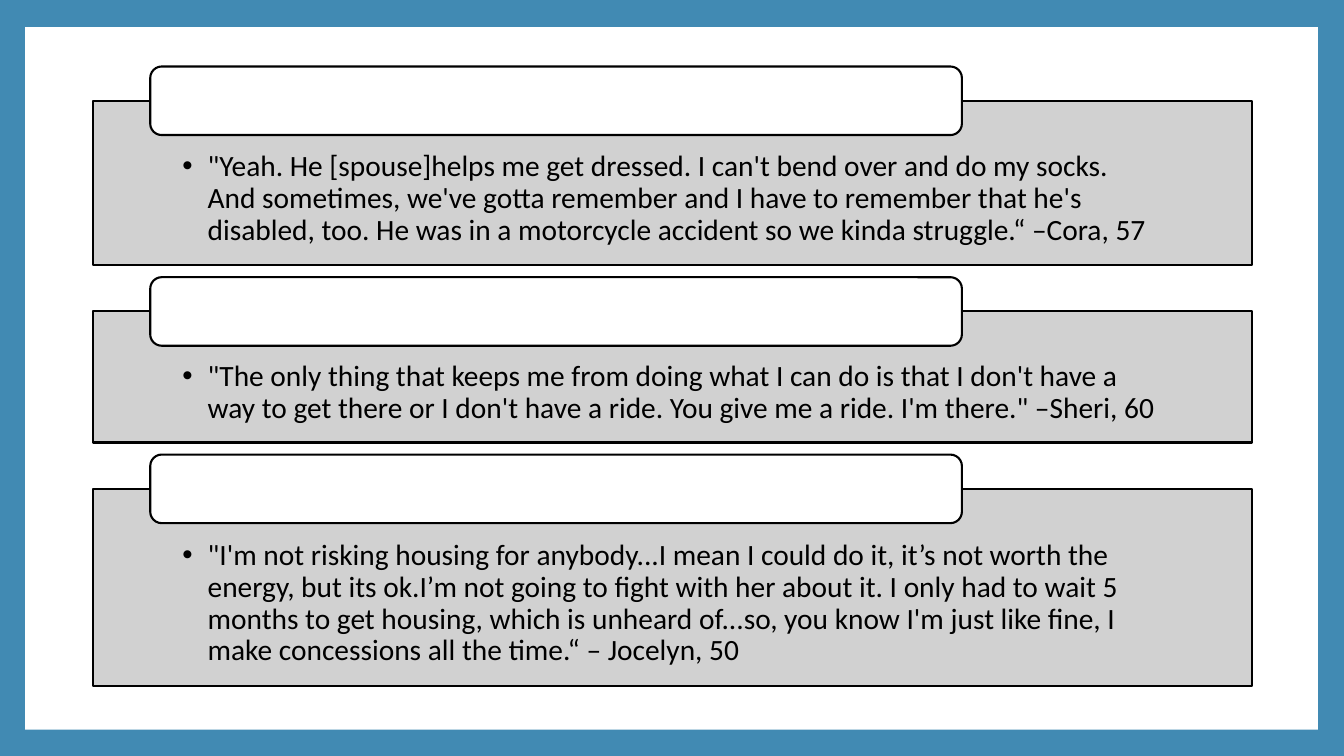
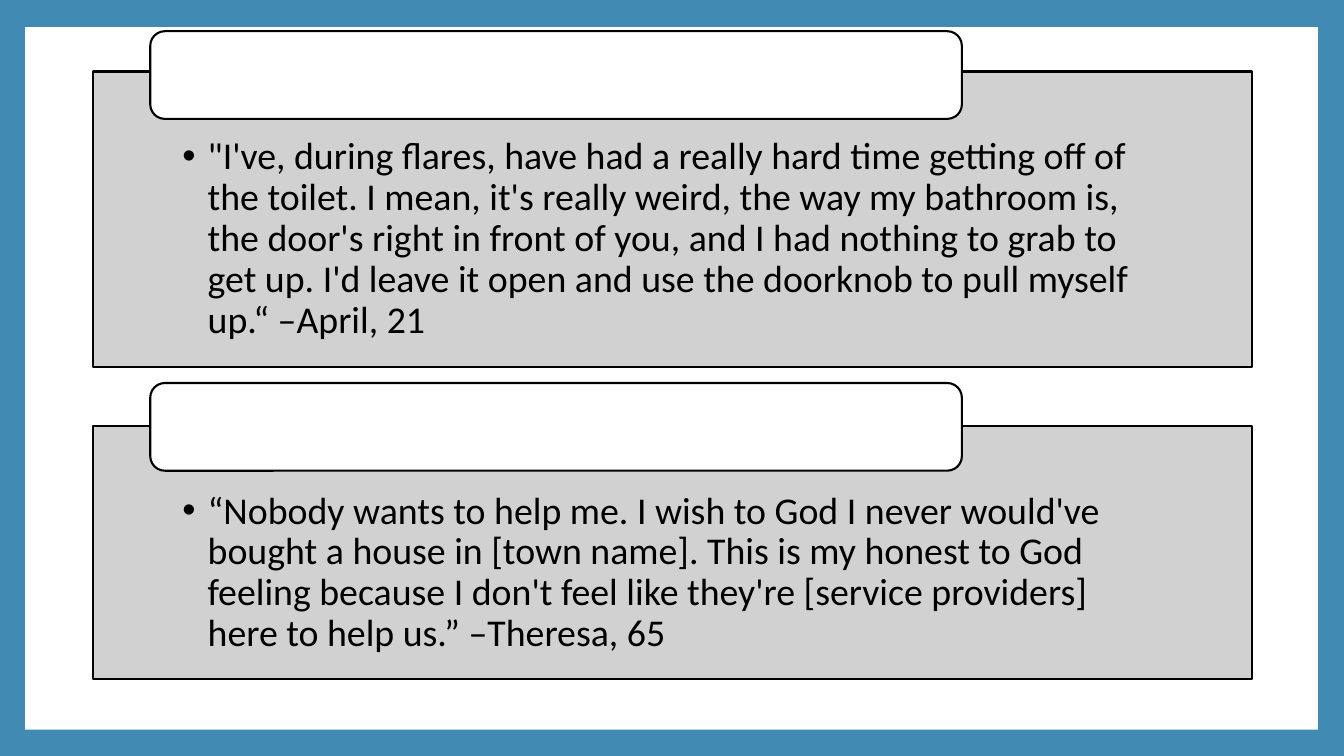
"""Builds two slides of interview quotes in grey panels with blank heading tabs."""
from lxml.etree import SubElement
from pptx import Presentation
from pptx.dml.color import RGBColor
from pptx.enum.shapes import MSO_SHAPE
from pptx.enum.text import MSO_ANCHOR, PP_ALIGN
from pptx.oxml.ns import qn
from pptx.util import Inches, Pt

BLUE = RGBColor(0x41, 0x8A, 0xB3)
WHITE = RGBColor(0xFF, 0xFF, 0xFF)
GREY = RGBColor(0xCC, 0xCC, 0xCC)
BLACK = RGBColor(0x00, 0x00, 0x00)
FONT = "Calibri"

MOBILITY_QUOTES = [
    (1.63, 0.34, "\"Yeah. He [spouse]helps me get dressed. I can't bend over and do my socks. "
     "And sometimes, we've gotta remember and I have to remember that he's disabled, too. "
     "He was in a motorcycle accident so we kinda struggle.“ –Cora, 57"),
    (1.3, 0.34, "\"The only thing that keeps me from doing what I can do is that I don't have a "
     "way to get there or I don't have a ride. You give me a ride. I'm there.\" –Sheri, 60"),
    (1.96, 0.34, "\"I'm not risking housing for anybody...I mean I could do it, it’s not worth the "
     "energy, but its ok.I’m not going to fight with her about it. I only had to wait 5 "
     "months to get housing, which is unheard of...so, you know I'm just like fine, I "
     "make concessions all the time.“ – Jocelyn, 50"),
]
HOME_QUOTES = [
    (2.93, 0.4, "\"I've, during flares, have had a really hard time getting off of the toilet. "
     "I mean, it's really weird, the way my bathroom is, the door's right in front of you, "
     "and I had nothing to grab to get up. I'd leave it open and use the doorknob to pull "
     "myself up.“ –April, 21"),
    (2.51, 0.43, "“Nobody wants to help me. I wish to God I never would've bought a house in "
     "[town name]. This is my honest to God feeling because I don't feel like they're "
     "[service providers] here to help us.” –Theresa, 65"),
]


def write_bullet(frame, text, *, size, insets, color=BLACK, indent=0.25):
    frame.word_wrap = True
    frame.vertical_anchor = MSO_ANCHOR.MIDDLE
    (frame.margin_left, frame.margin_top,
     frame.margin_right, frame.margin_bottom) = map(Inches, insets)
    paragraph = frame.paragraphs[0]
    paragraph.alignment = PP_ALIGN.LEFT
    paragraph.line_spacing = 0.9
    paragraph.space_after = Pt(round(size * 0.15))
    properties = paragraph._p.get_or_add_pPr()
    properties.set("marL", str(Inches(indent)))
    properties.set("indent", str(-Inches(indent)))
    SubElement(properties, qn("a:buFont")).set("typeface", "Arial")
    SubElement(properties, qn("a:buChar")).set("char", "•")
    run = paragraph.add_run()
    run.text = text
    run.font.name = FONT
    run.font.size = Pt(size)
    run.font.color.rgb = color


class QuoteDeck:
    def __init__(self):
        self.deck = Presentation()
        self.deck.slide_width = Inches(13.33)
        self.deck.slide_height = Inches(7.5)
        self.slide = None

    def start_slide(self):
        self.slide = self.deck.slides.add_slide(self.deck.slide_layouts[6])
        backdrop = self.slide.background.fill
        backdrop.solid()
        backdrop.fore_color.rgb = BLUE
        self.box(MSO_SHAPE.RECTANGLE, 0.25, 0.27, 12.82, 6.97, WHITE, outlined=False)

    def box(self, preset, left, top, width, height, fill, outlined=True):
        shape = self.slide.shapes.add_shape(
            preset, Inches(left), Inches(top), Inches(width), Inches(height))
        shape.shadow.inherit = False
        shape.fill.solid()
        shape.fill.fore_color.rgb = fill
        if outlined:
            shape.line.color.rgb = BLACK
            shape.line.width = Pt(1.5)
        else:
            shape.line.fill.background()
        return shape

    def panel(self, top, height, quote, size, insets):
        panel = self.box(MSO_SHAPE.RECTANGLE, 0.92, top, 11.5, height, GREY)
        tint = panel.fill._xPr.find(qn("a:solidFill"))[0]
        SubElement(tint, qn("a:alpha")).set("val", "90000")
        write_bullet(panel.text_frame, quote, size=size, insets=insets)

    def tab(self, top, height):
        self.box(MSO_SHAPE.ROUNDED_RECTANGLE, 1.49, top, 8.05, height, WHITE)

    def quote_slide(self, quotes, *, top, gap, tab_height, size, insets):
        self.start_slide()
        for height, tab_rise, quote in quotes:
            self.panel(top, height, quote, size, insets)
            self.tab(top - tab_rise, tab_height)
            top += height + gap


def main():
    quotes = QuoteDeck()
    quotes.quote_slide(MOBILITY_QUOTES, top=1, gap=0.46, tab_height=0.68,
                       size=21, insets=(0.89, 0.48, 0.89, 0.16))
    quotes.quote_slide(HOME_QUOTES, top=0.71, gap=0.59, tab_height=0.87,
                       size=27, insets=(0.89, 0.61, 0.89, 0.21))
    quotes.deck.save("out.pptx")


if __name__ == "__main__":
    main()
